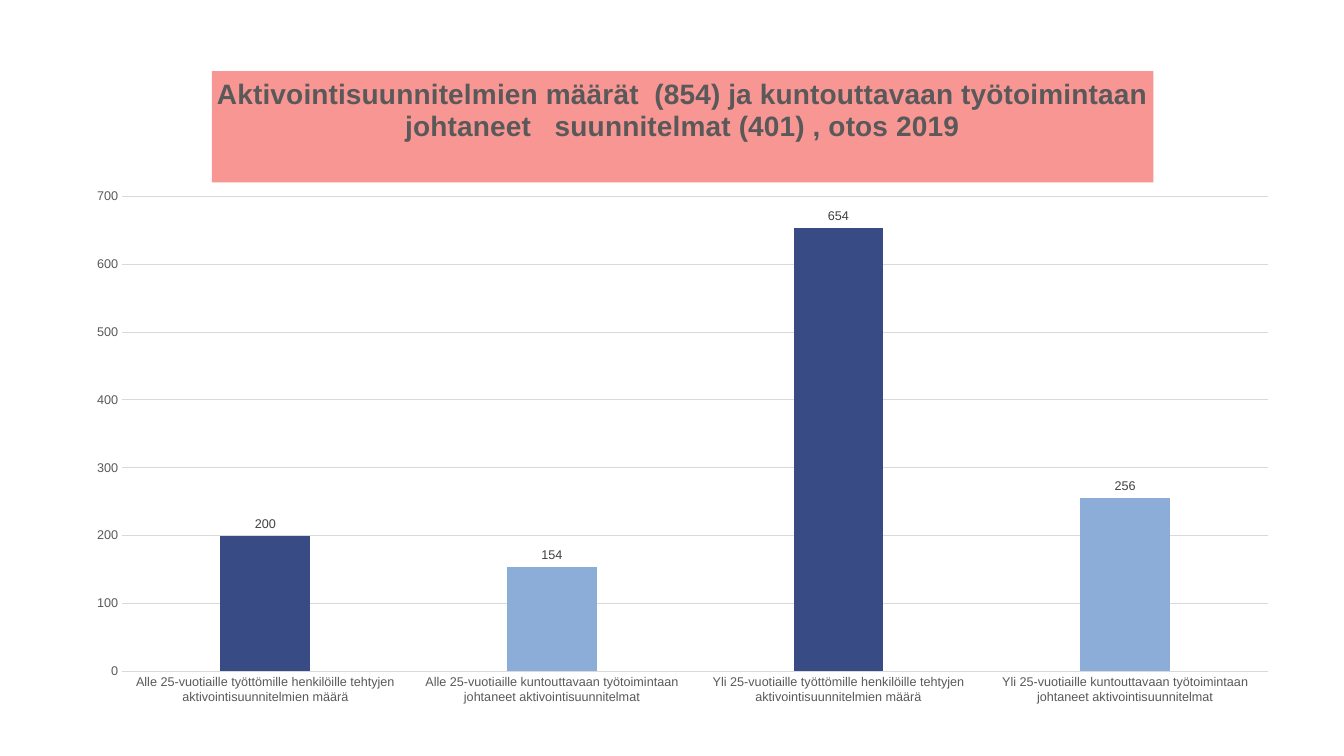
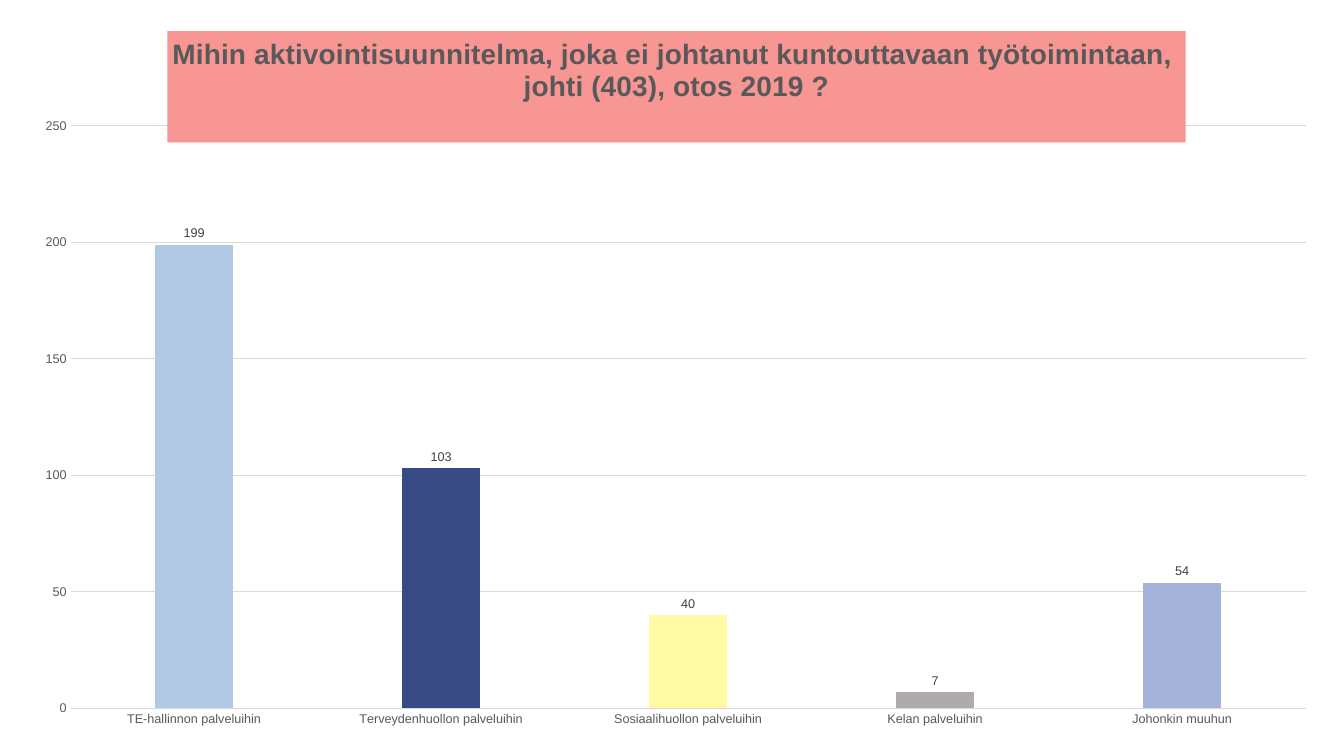
"""Build two slides of column charts on activation plans in 2019."""
from lxml import etree
from pptx import Presentation
from pptx.chart.data import CategoryChartData
from pptx.dml.color import RGBColor
from pptx.enum import chart as kinds
from pptx.oxml import ns
from pptx.util import Inches, Pt

FONT = "Arial"
BLACK = RGBColor(0x00, 0x00, 0x00)
GREY_TEXT = RGBColor(0x59, 0x59, 0x59)
LABEL_TEXT = RGBColor(0x40, 0x40, 0x40)
GRID = RGBColor(0xD9, 0xD9, 0xD9)
TITLE_FILL = RGBColor(0xF8, 0x96, 0x94)
NAVY = RGBColor(0x38, 0x4B, 0x85)
BLUE = RGBColor(0x8B, 0xAD, 0xD8)
PALE_BLUE = RGBColor(0xB1, 0xC9, 0xE5)
YELLOW = RGBColor(0xFF, 0xFA, 0xA3)
WARM_GREY = RGBColor(0xAF, 0xAB, 0xAB)
LILAC = RGBColor(0xA5, 0xB2, 0xD9)

PLANS = {
    "title": "Aktivointisuunnitelmien määrät  (854) ja kuntouttavaan työtoimintaan "
             "johtaneet   suunnitelmat (401) , otos 2019\n\n",
    "frame": (0.72, 0.52, 12.1, 6.6),
    "plot": (1.21, 1.95, 11.37, 4.71),
    "scale": (700, 100),
    "columns": [
        ("Alle 25-vuotiaille työttömille henkilöille tehtyjen "
         "aktivointisuunnitelmien määrä", 200, NAVY),
        ("Alle 25-vuotiaille kuntouttavaan työtoimintaan johtaneet "
         "aktivointisuunnitelmat", 154, BLUE),
        ("Yli 25-vuotiaille työttömille henkilöille tehtyjen "
         "aktivointisuunnitelmien määrä", 654, NAVY),
        ("Yli 25-vuotiaille kuntouttavaan työtoimintaan johtaneet "
         "aktivointisuunnitelmat", 256, BLUE),
    ],
}
OUTCOMES = {
    "title": "Mihin aktivointisuunnitelma, joka ei johtanut kuntouttavaan "
             "työtoimintaan,  johti (403), otos 2019 ?\n",
    "frame": (0.2, 0.11, 13.02, 7.25),
    "plot": (0.7, 1.25, 12.25, 5.78),
    "scale": (250, 50),
    "columns": [
        ("TE-hallinnon palveluihin", 199, PALE_BLUE),
        ("Terveydenhuollon palveluihin", 103, NAVY),
        ("Sosiaalihuollon palveluihin", 40, YELLOW),
        ("Kelan palveluihin", 7, WARM_GREY),
        ("Johonkin muuhun", 54, LILAC),
    ],
}


def style_font(font, size, color, bold=False):
    font.name = FONT
    font.size = Pt(size)
    font.bold = bold
    font.color.rgb = color


def style_line(line):
    line.color.rgb = GRID
    line.width = Pt(0.75)


def add_title(chart, wording):
    chart.has_title = True
    title = chart.chart_title
    title.include_in_layout = False
    title.format.fill.solid()
    title.format.fill.fore_color.rgb = TITLE_FILL
    title.text_frame.text = wording
    for para in title.text_frame.paragraphs:
        style_font(para.font, 20, GREY_TEXT, bold=True)
        for span in para.runs:
            style_font(span.font, 20, GREY_TEXT, bold=True)


def style_axes(chart, maximum, step):
    for axis in (chart.category_axis, chart.value_axis):
        axis.major_tick_mark = axis.minor_tick_mark = kinds.XL_TICK_MARK.NONE
        style_font(axis.tick_labels.font, 9, GREY_TEXT)
    style_line(chart.category_axis.format.line)
    values = chart.value_axis
    values.format.line.fill.background()
    values.minimum_scale, values.maximum_scale = 0, maximum
    values.major_unit = step
    values.has_major_gridlines = True
    style_line(values.major_gridlines.format.line)


def style_columns(plot, colors):
    plot.gap_width, plot.overlap = 219, -27
    plot.vary_by_categories = False
    series = plot.series[0]
    series.format.fill.solid()
    series.format.fill.fore_color.rgb = NAVY
    for index, color in enumerate(colors):
        if color != NAVY:
            fill = series.points[index].format.fill
            fill.solid()
            fill.fore_color.rgb = color
    labels = series.data_labels
    labels.show_value = True
    labels.position = kinds.XL_LABEL_POSITION.OUTSIDE_END
    style_font(labels.font, 9, LABEL_TEXT)


def place_plot(chart, frame, plot):
    area = chart.plots[0]._element.getparent()
    for layout in area.findall(ns.qn("c:layout")):
        area.remove(layout)
    layout = etree.Element(ns.qn("c:layout"))
    area.insert(0, layout)
    manual = etree.SubElement(layout, ns.qn("c:manualLayout"))
    left, top, width, height = frame
    settings = {
        "layoutTarget": "inner", "xMode": "edge", "yMode": "edge",
        "x": (plot[0] - left) / width, "y": (plot[1] - top) / height,
        "w": plot[2] / width, "h": plot[3] / height,
    }
    for name, value in settings.items():
        etree.SubElement(manual, ns.qn(f"c:{name}")).set("val", str(value))


def add_chart_page(deck, content):
    page = deck.slides.add_slide(deck.slide_layouts[6])
    names, values, colors = zip(*content["columns"])
    data = CategoryChartData()
    data.categories = names
    data.add_series("Series 1", values)
    chart = page.shapes.add_chart(
        kinds.XL_CHART_TYPE.COLUMN_CLUSTERED,
        *map(Inches, content["frame"]), data).chart
    style_font(chart.font, 10, BLACK)
    chart.has_legend = False
    add_title(chart, content["title"])
    style_axes(chart, *content["scale"])
    style_columns(chart.plots[0], colors)
    place_plot(chart, content["frame"], content["plot"])


def main():
    deck = Presentation()
    deck.slide_width, deck.slide_height = Inches(13.33), Inches(7.5)
    for content in (PLANS, OUTCOMES):
        add_chart_page(deck, content)
    deck.save("out.pptx")


if __name__ == "__main__":
    main()
